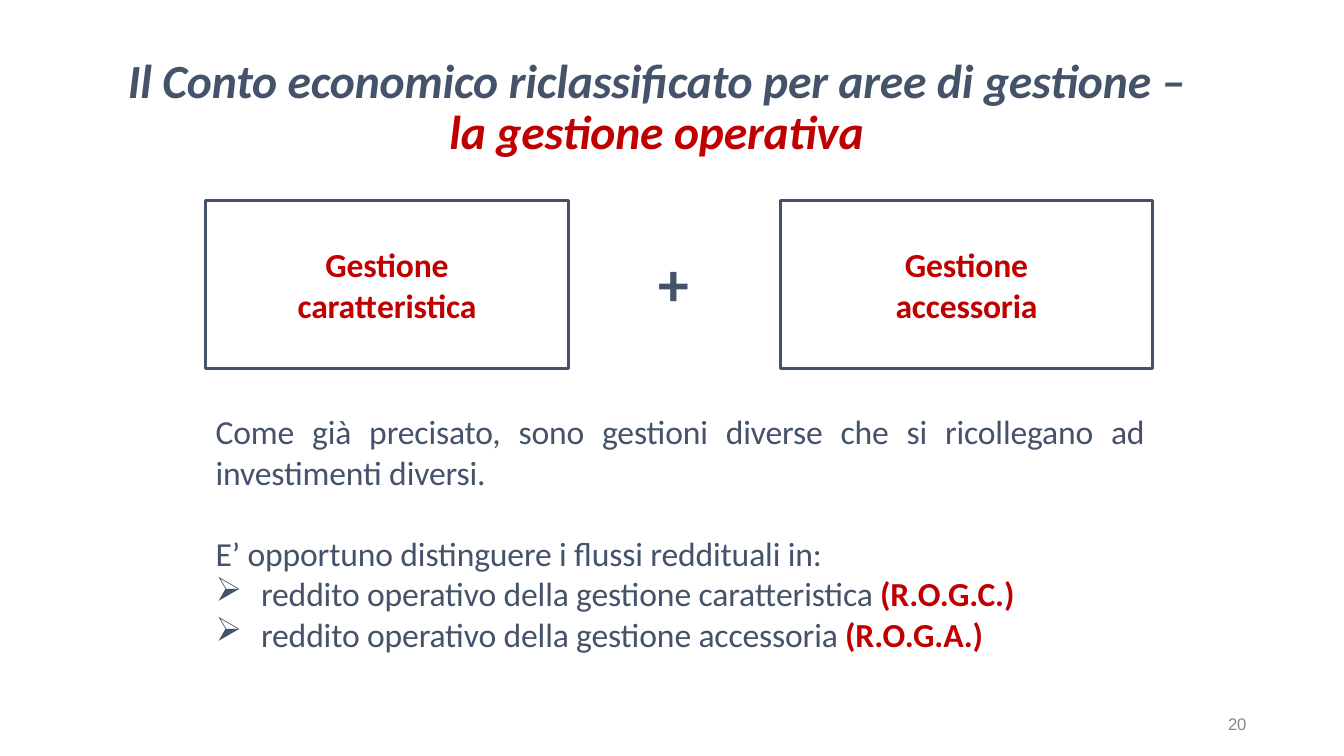
from lxml.etree import SubElement
from pptx import Presentation
from pptx.dml.color import RGBColor
from pptx.enum.shapes import MSO_SHAPE
from pptx.enum.text import MSO_ANCHOR, PP_ALIGN
from pptx.oxml.ns import qn
from pptx.util import Inches, Pt

WIDTH, HEIGHT = Inches(13.33), Inches(7.5)
SLATE, RED, GREY = "44536A", "C00000", "888888"


def color(value):
    return RGBColor.from_string(value)


def area(left, top, width, height):
    return [int(share * side / 100) for share, side in
            zip((left, top, width, height), (WIDTH, HEIGHT, WIDTH, HEIGHT))]


def prepare_frame(box, anchor=MSO_ANCHOR.TOP):
    frame = box.text_frame
    frame.word_wrap = True
    frame.vertical_anchor = anchor
    frame.margin_left = frame.margin_right = 0
    frame.margin_top = frame.margin_bottom = 0
    return frame


def add_text_box(page, *shares):
    return prepare_frame(page.shapes.add_textbox(*area(*shares)))


def add_paragraph(frame, spans, size, align=PP_ALIGN.LEFT, font="Calibri",
                  italic=False, line=None, before=0, bullet=None):
    first = frame.paragraphs[0]
    para = frame.add_paragraph() if first.runs else first
    para.alignment = align
    para.space_before = Pt(before)
    if line:
        para.line_spacing = Pt(line)
    if bullet:
        properties = para._p.get_or_add_pPr()
        properties.set("marL", str(Inches(0.45)))
        properties.set("indent", str(-Inches(0.45)))
        SubElement(properties, qn("a:buChar"), char=bullet)
    for text, ink, bold in spans:
        span = para.add_run()
        span.text = text
        span.font.name = font
        span.font.size = Pt(size)
        span.font.bold = bold
        span.font.italic = italic
        span.font.color.rgb = color(ink)
        span._r.get_or_add_rPr().set("spc", "-10")


def add_area_box(page, left, width, words):
    box = page.shapes.add_shape(MSO_SHAPE.RECTANGLE, *area(left, 26.53, width, 22.27))
    box.shadow.inherit = False
    box.fill.background()
    box.line.color.rgb = color(SLATE)
    box.line.width = Pt(2.28)
    frame = prepare_frame(box, MSO_ANCHOR.MIDDLE)
    for word in words:
        add_paragraph(frame, [(word, RED, True)], 24, PP_ALIGN.CENTER)


def add_title(page):
    frame = add_text_box(page, 6.75, 7.47, 84.2, 14)
    for text, ink in (
        ("Il Conto economico riclassificato per aree di gestione –", SLATE),
        ("la gestione operativa", RED),
    ):
        add_paragraph(frame, [(text, ink, True)], 34, PP_ALIGN.CENTER,
                      italic=True, line=36.7)


def add_explanation(page):
    frame = add_text_box(page, 16.05, 54.4, 69.1, 32.4)
    add_paragraph(frame, [("Come già precisato, sono gestioni diverse che si ricollegano "
                           "ad investimenti diversi.", SLATE, False)], 24, PP_ALIGN.JUSTIFY)
    add_paragraph(frame, [("E’ opportuno distinguere i flussi reddituali in:",
                           SLATE, False)], 24, before=29.3)
    for kind, label in (("caratteristica", "(R.O.G.C.)"), ("accessoria", "(R.O.G.A.)")):
        add_paragraph(frame, [(f"reddito operativo della gestione {kind} ", SLATE, False),
                              (label, RED, True)], 24, bullet="➢")


def main():
    deck = Presentation()
    deck.slide_width, deck.slide_height = WIDTH, HEIGHT
    page = deck.slides.add_slide(deck.slide_layouts[6])
    add_title(page)
    add_area_box(page, 15.3, 27, ("Gestione", "caratteristica"))
    add_area_box(page, 58.06, 27.7, ("Gestione", "accessoria"))
    add_paragraph(add_text_box(page, 49, 32.35, 2.5, 10.1), [("+", SLATE, True)], 44)
    add_explanation(page)
    add_paragraph(add_text_box(page, 91.37, 94.4, 1.75, 2.5), [("20", GREY, False)],
                  12, font="Arial", line=14.2)
    deck.save("out.pptx")


if __name__ == "__main__":
    main()
